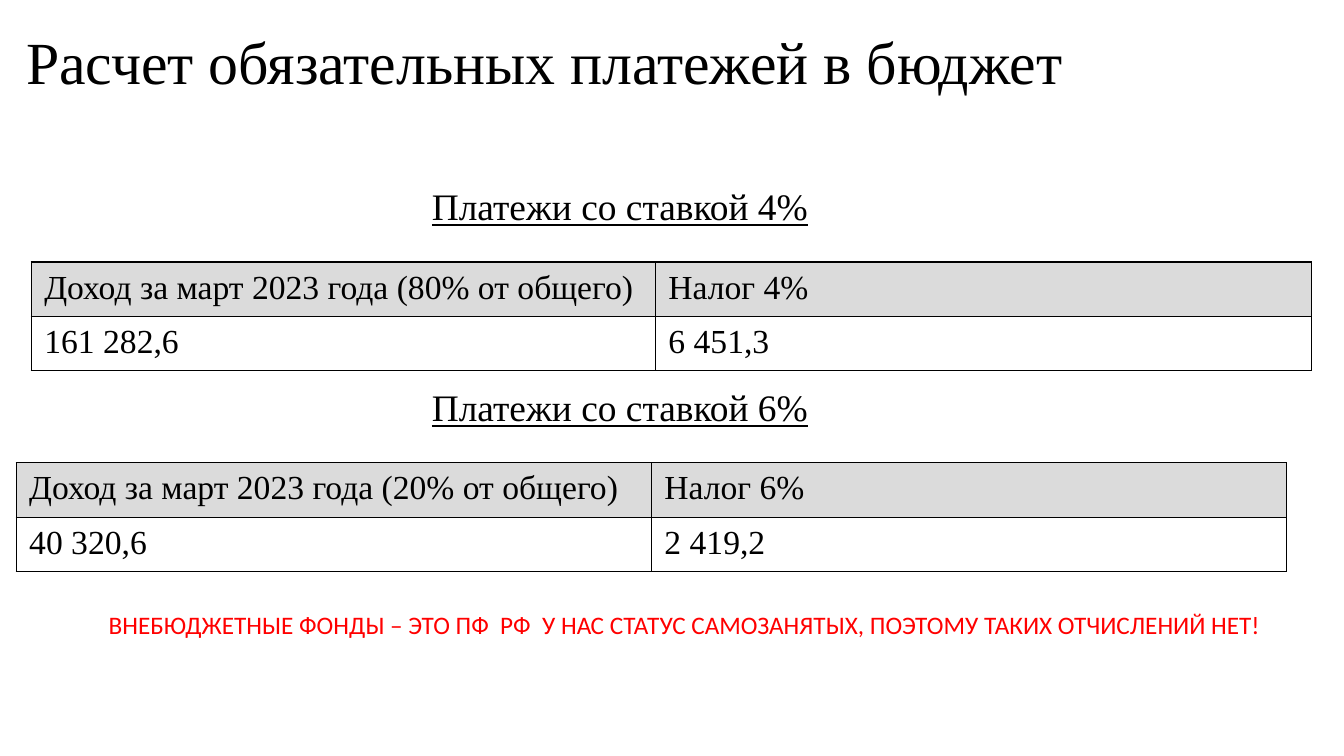
from lxml import etree
from pptx import Presentation
from pptx import util as u
from pptx.dml import color
from pptx.enum import text
from pptx.oxml import ns

BLACK, RED, GRAY = "000000", "FF0000", "DBDBDB"
SERIF, SANS = "Times New Roman", "Calibri"


def rgb(hex_code):
    return color.RGBColor.from_string(hex_code)


def apply(target, values):
    """Set every attribute named in values on target."""
    for key, value in values.items():
        setattr(target, key, value)


def inches(*lengths):
    return [u.Inches(length) for length in lengths]


class TaxSlide:
    frame_format = {
        "margin_left": u.Inches(0.1), "margin_right": u.Inches(0.1),
        "margin_top": u.Inches(0.07), "margin_bottom": u.Inches(0.07),
        "vertical_anchor": text.MSO_ANCHOR.TOP,
        "auto_size": text.MSO_AUTO_SIZE.SHAPE_TO_FIT_TEXT,
    }
    cell_format = {
        "margin_left": u.Inches(0.13), "margin_right": u.Inches(0.13),
        "margin_top": u.Inches(0.07), "margin_bottom": u.Inches(0.07),
    }

    def __init__(self, deck):
        self.slide = deck.slides.add_slide(deck.slide_layouts[5])

    def add_words(self, frame, words, size, font=SERIF, ink=BLACK,
                  align=text.PP_ALIGN.LEFT, underline=False):
        paragraph = frame.paragraphs[0]
        paragraph.alignment = align
        run = paragraph.add_run()
        run.text = words
        apply(run.font, {"size": u.Pt(size), "name": font, "underline": underline})
        run.font.color.rgb = rgb(ink)

    def title(self, words, box):
        heading = self.slide.shapes.title
        apply(heading, dict(zip(("left", "top", "width", "height"), inches(*box))))
        apply(heading.text_frame, {**self.frame_format, "word_wrap": True})
        self.add_words(heading.text_frame, words, 42.7)

    def label(self, words, box, size, wrap=True, **style):
        frame = self.slide.shapes.add_textbox(*inches(*box)).text_frame
        apply(frame, {**self.frame_format, "word_wrap": wrap})
        self.add_words(frame, words, size, **style)

    def border(self, cell):
        properties = cell._tc.get_or_add_tcPr()
        for side in ("lnL", "lnR", "lnT", "lnB"):
            line = etree.SubElement(properties, ns.qn(f"a:{side}"), w=str(u.Pt(1)))
            fill = etree.SubElement(line, ns.qn("a:solidFill"))
            etree.SubElement(fill, ns.qn("a:srgbClr"), val=BLACK)

    def table(self, rows, left, top, widths, row_height=0.54):
        box = inches(left, top, sum(widths), row_height * len(rows))
        grid = self.slide.shapes.add_table(len(rows), len(widths), *box).table
        apply(grid, {"first_row": False, "horz_banding": False})
        for column, width in zip(grid.columns, widths):
            column.width = u.Inches(width)
        for r, values in enumerate(rows):
            for c, value in enumerate(values):
                cell = grid.cell(r, c)
                apply(cell, self.cell_format)
                self.border(cell)
                if r == 0:
                    cell.fill.solid()
                    cell.fill.fore_color.rgb = rgb(GRAY)
                else:
                    cell.fill.background()
                self.add_words(cell.text_frame, value, 24)


def main():
    deck = Presentation()
    apply(deck, {"slide_width": u.Inches(13.33), "slide_height": u.Inches(7.5)})
    page = TaxSlide(deck)
    page.title("Расчет обязательных платежей в бюджет", (0.16, 0.18, 11.55, 0.82))

    payments = [
        (4, 80, "161 282,6", "6 451,3", 1.75, (0.31, 2.6), (6.19, 6.51)),
        (6, 20, "40 320,6", "2 419,2", 3.74, (0.16, 4.59), (6.3, 6.3)),
    ]
    for rate, share, income, tax, label_top, corner, widths in payments:
        page.label(f"Платежи со ставкой {rate}%", (3.84, label_top, 4.62, 0.55), 26.7,
                   align=text.PP_ALIGN.CENTER, underline=True)
        header = (f"Доход за март 2023 года ({share}% от общего)", f"Налог {rate}%")
        page.table([header, (income, tax)], *corner, widths)

    page.label("ВНЕБЮДЖЕТНЫЕ ФОНДЫ – ЭТО ПФ  РФ  У НАС СТАТУС САМОЗАНЯТЫХ, "
               "ПОЭТОМУ ТАКИХ ОТЧИСЛЕНИЙ НЕТ!",
               (0.98, 5.97, 11.74, 0.71), 18, wrap=False, font=SANS, ink=RED)
    deck.save("out.pptx")


if __name__ == "__main__":
    main()
